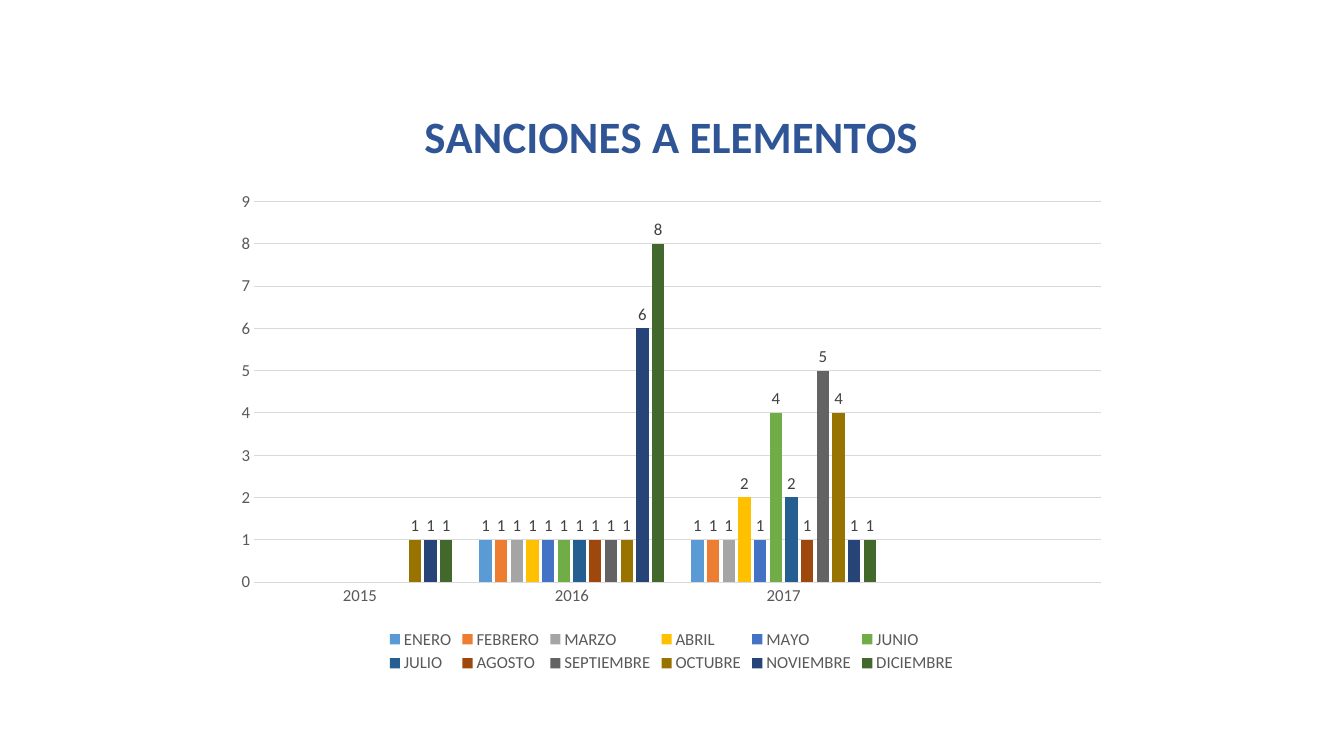
"""Build a slide with a clustered column chart of monthly sanctions by year."""
import pptx
import pptx.chart.data
import pptx.dml.color
import pptx.enum.chart
import pptx.util

PX = 9525
FONT = "Calibri"
GREY = "595959"
RULE = "D9D9D9"
YEARS = ["2015", "2016", "2017", ""]
MONTHS = [
    ("ENERO", "5B9BD5", (None, 1, 1)),
    ("FEBRERO", "ED7D31", (None, 1, 1)),
    ("MARZO", "A5A5A5", (None, 1, 1)),
    ("ABRIL", "FFC000", (None, 1, 2)),
    ("MAYO", "4472C4", (None, 1, 1)),
    ("JUNIO", "70AD47", (None, 1, 4)),
    ("JULIO", "255E91", (None, 1, 2)),
    ("AGOSTO", "9E480E", (None, 1, 1)),
    ("SEPTIEMBRE", "636363", (None, 1, 5)),
    ("OCTUBRE", "997300", (1, 1, 4)),
    ("NOVIEMBRE", "264478", (1, 6, 1)),
    ("DICIEMBRE", "43682B", (1, 8, 1)),
]


def px(length):
    """Turn whole pixels into EMU."""
    return pptx.util.Emu(length * PX)


def color(value):
    """Turn a hex string into a colour."""
    return pptx.dml.color.RGBColor.from_string(value)


def apply(target, values):
    """Set each attribute of the target from a dict."""
    for name, value in values.items():
        setattr(target, name, value)


def format_font(font, size, ink, bold=False):
    """Set typeface, size, weight and colour of a font."""
    apply(font, {"name": FONT, "size": pptx.util.Pt(size), "bold": bold})
    font.color.rgb = color(ink)


def format_line(line):
    """Draw a thin light grey line."""
    line.width = pptx.util.Pt(0.75)
    line.color.rgb = color(RULE)


def add_sanctions_chart(page, left, top, width, height):
    """Place the column chart and return it."""
    data = pptx.chart.data.CategoryChartData()
    data.categories = YEARS
    for month, _, counts in MONTHS:
        data.add_series(month, counts + (None,))
    kind = pptx.enum.chart.XL_CHART_TYPE.COLUMN_CLUSTERED
    frame = page.shapes.add_chart(kind, px(left), px(top), px(width), px(height), data)
    return frame.chart


def format_title(chart, text):
    """Write the chart title."""
    chart.has_title = True
    para = chart.chart_title.text_frame.paragraphs[0]
    span = para.add_run()
    span.text = text
    format_font(span.font, 32, "2F5597", True)


def format_columns(chart):
    """Colour the columns and label their values."""
    plot = chart.plots[0]
    apply(plot, {"gap_width": 219, "overlap": -27, "vary_by_categories": False})
    for series, (_, fill, _) in zip(plot.series, MONTHS):
        series.format.fill.solid()
        series.format.fill.fore_color.rgb = color(fill)
        series.invert_if_negative = False
        labels = series.data_labels
        position = pptx.enum.chart.XL_LABEL_POSITION.OUTSIDE_END
        apply(labels, {"show_value": True, "position": position})
        format_font(labels.font, 12, "404040")


def format_axes(chart):
    """Style both axes and the gridlines."""
    none = pptx.enum.chart.XL_TICK_MARK.NONE
    for axis in (chart.category_axis, chart.value_axis):
        apply(axis, {"major_tick_mark": none, "minor_tick_mark": none})
        format_font(axis.tick_labels.font, 12, GREY)
    format_line(chart.category_axis.format.line)
    chart.value_axis.format.line.fill.background()
    chart.value_axis.has_major_gridlines = True
    format_line(chart.value_axis.major_gridlines.format.line)


def format_legend(chart):
    """Put the legend below the plot."""
    chart.has_legend = True
    position = pptx.enum.chart.XL_LEGEND_POSITION.BOTTOM
    apply(chart.legend, {"position": position, "include_in_layout": False})
    format_font(chart.legend.font, 12, GREY)


def main():
    """Build and save the deck."""
    deck = pptx.Presentation()
    apply(deck, {"slide_width": px(1280), "slide_height": px(720)})
    page = deck.slides.add_slide(deck.slide_layouts[6])
    chart = add_sanctions_chart(page, 213, 76, 853, 569)
    format_font(chart.font, 10, "000000")
    format_title(chart, "SANCIONES A ELEMENTOS")
    format_columns(chart)
    format_axes(chart)
    format_legend(chart)
    deck.save("out.pptx")


if __name__ == "__main__":
    main()
